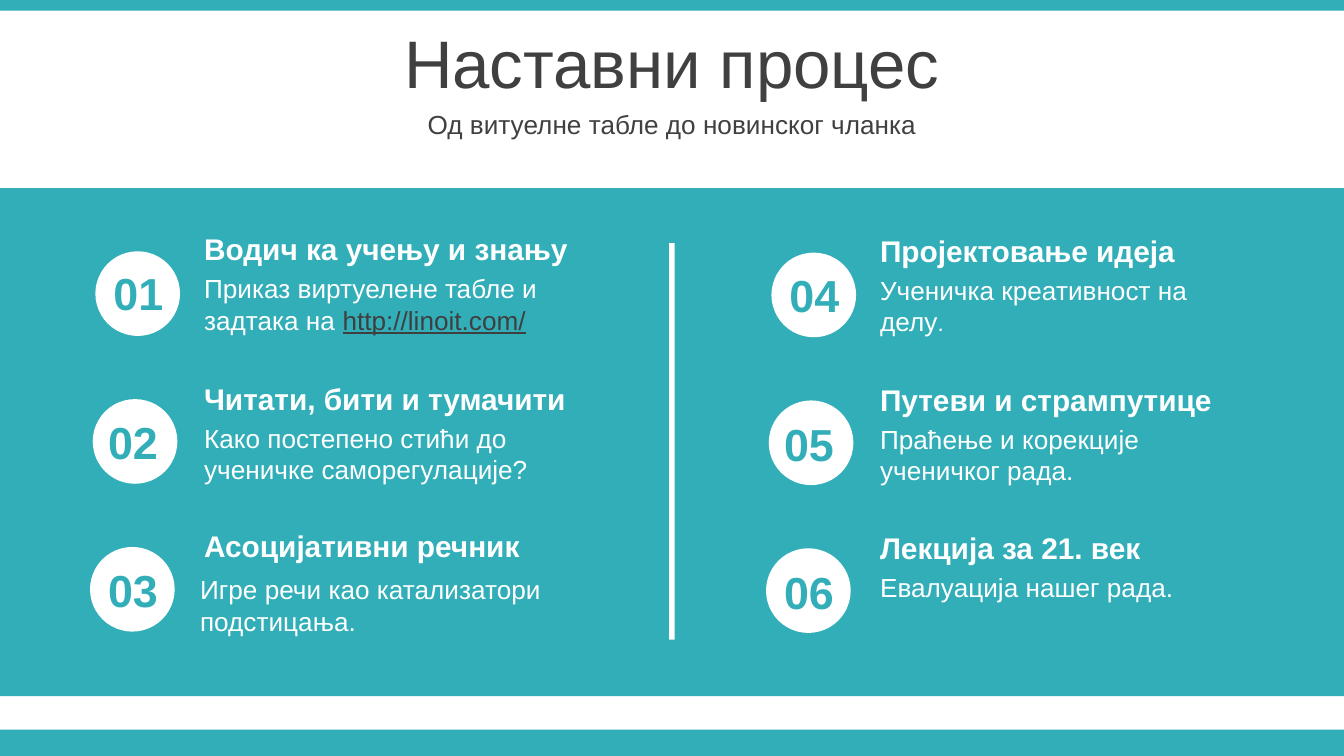
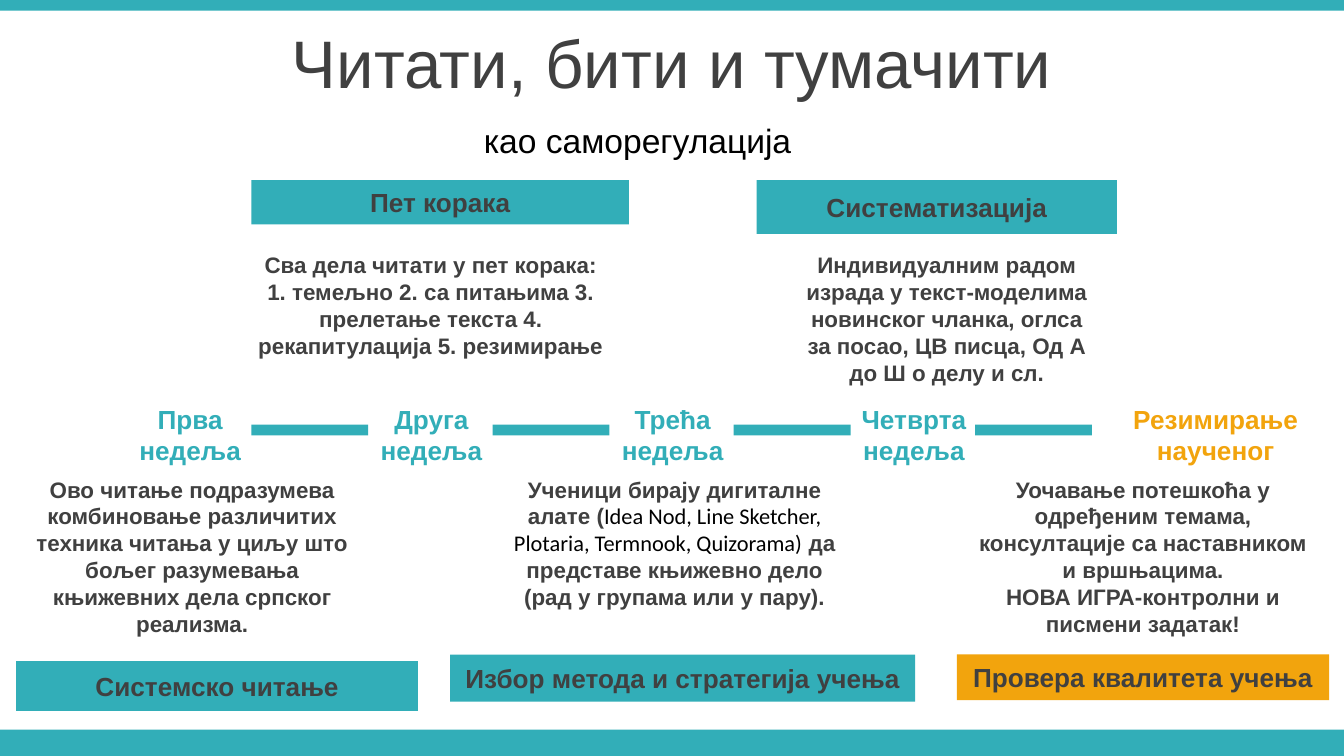
from dataclasses import dataclass
from typing import NamedTuple

import pptx
import pptx.dml.color
import pptx.enum.shapes
import pptx.enum.text
import pptx.util

Inches = pptx.util.Inches
Kind = pptx.enum.shapes.MSO_SHAPE
Align = pptx.enum.text.PP_ALIGN
Anchor = pptx.enum.text.MSO_ANCHOR


@dataclass(frozen=True)
class Theme:
    teal: str = "32AEB8"
    gold: str = "F2A40D"
    white: str = "FFFFFF"
    black: str = "000000"
    dark: str = "404040"
    link: str = "3F3F3F"
    font: str = "Arial"
    plain: str = "Calibri"
    title: int = 36
    count: int = 24
    lead: int = 18
    head: int = 16
    body: int = 14
    note: int = 12


LOOK = Theme()


class Box(NamedTuple):
    x: float
    y: float
    w: float
    h: float


class Run(NamedTuple):
    text: str
    size: int = LOOK.body
    color: str = LOOK.white
    bold: bool = False
    font: str = LOOK.font
    line: bool = False


Paras = list[list[Run]]


class Step(NamedTuple):
    head: str
    body: list[Run]
    dx: float = 0
    dy: float = 0


class Card(NamedTuple):
    label: str
    bar: Box
    area: Box
    paras: Paras
    fill: str = LOOK.teal


def place(shape, box: Box) -> None:
    shape.left, shape.top, shape.width, shape.height = map(Inches, box)


def write(shape, paras: Paras, align=Align.LEFT, anchor=Anchor.TOP) -> None:
    frame = shape.text_frame
    frame.word_wrap = True
    frame.auto_size = pptx.enum.text.MSO_AUTO_SIZE.NONE
    frame.vertical_anchor = anchor
    for i, runs in enumerate(paras):
        para = frame.add_paragraph() if i else frame.paragraphs[0]
        para.alignment = align
        for item in runs:
            run = para.add_run()
            run.text = item.text
            font = run.font
            font.name, font.size = item.font, pptx.util.Pt(item.size)
            font.bold, font.underline = item.bold, item.line
            font.color.rgb = pptx.dml.color.RGBColor.from_string(item.color)


def add_text(slide, box: Box, paras: Paras, align=Align.LEFT,
             anchor=Anchor.TOP):
    shape = slide.shapes.add_textbox(*map(Inches, box))
    write(shape, paras, align, anchor)
    return shape


def add_form(slide, box: Box, fill: str, kind=Kind.RECTANGLE):
    shape = slide.shapes.add_shape(kind, *map(Inches, box))
    shape.shadow.inherit = False
    shape.fill.solid()
    shape.fill.fore_color.rgb = pptx.dml.color.RGBColor.from_string(fill)
    shape.line.fill.background()
    return shape


def add_bands(slide) -> None:
    """Put the top and bottom bands on the layout that the slides share."""
    for box in (Box(0, 5.43, 10, 0.2), Box(0, 0, 10, 0.08)):
        band = add_form(slide, box, LOOK.teal)
        slide.slide_layout.shapes.element.append(band.element)


def add_page(deck, title: str):
    slide = deck.slides.add_slide(deck.slide_layouts[5])
    place(slide.shapes.title, Box(0, 0.14, 10, 0.63))
    write(slide.shapes.title, [[Run(title, LOOK.title, LOOK.dark)]],
          Align.CENTER, Anchor.MIDDLE)
    return slide


STEPS = [
    Step("Водич ка учењу и знању",
         [Run("Приказ виртуелене табле и задтака на "),
          Run("http://linoit.com/", color=LOOK.link, line=True)]),
    Step("Читати, бити и тумачити",
         [Run("Како постепено стићи до ученичке саморегулације?")]),
    Step("Асоцијативни речник",
         [Run("Игре речи као катализатори подстицања.")], -0.03, 0.03),
    Step("Пројектовање идеја",
         [Run("Ученичка креативност на делу"), Run(".", LOOK.note)]),
    Step("Путеви и стрампутице",
         [Run("Праћење и корекције ученичког рада.")]),
    Step("Лекција за 21. век", [Run("Евалуација нашег рада.")]),
]
TOPS = (1.67, 2.78, 3.88)
COUNT_X = (0.68, 0.64, 0.64)


def add_step(slide, i: int, step: Step) -> None:
    col, row = divmod(i, len(TOPS))
    x, drop = 5.03 * col, 0.01 * col
    y = TOPS[row] + drop
    add_form(slide, Box(x + 0.71 - 0.02 * row, 1.87 + 1.1 * row + drop,
                        0.63, 0.63), LOOK.white, Kind.OVAL)
    add_text(slide, Box(x + COUNT_X[row], y + 0.26, 0.7, 0.5),
             [[Run(f"{i + 1:02}", LOOK.count, LOOK.teal, True)]],
             Align.CENTER)
    add_text(slide, Box(x + 1.42 + step.dx, y + 0.31 + step.dy, 2.91, 0.57),
             [step.body])
    add_text(slide, Box(x + 1.42, y, 2.91, 0.37),
             [[Run(step.head, LOOK.head, bold=True)]])


def build_steps(deck) -> None:
    slide = add_page(deck, "Наставни процес")
    add_bands(slide)
    add_text(slide, Box(0, 0.77, 10, 0.31),
             [[Run("Од витуелне табле до новинског чланка",
                   color=LOOK.dark)]], Align.CENTER, Anchor.MIDDLE)
    add_form(slide, Box(0, 1.4, 10, 3.78), LOOK.teal)
    add_form(slide, Box(4.98, 1.81, 0.04, 2.95), LOOK.white)
    for i, step in enumerate(STEPS):
        add_step(slide, i, step)


def note(text: str) -> Run:
    return Run(text, LOOK.note, LOOK.dark, True)


CARDS = [
    Card("Системско читање", Box(0.12, 4.92, 2.99, 0.37),
         Box(0.12, 3.49, 2.62, 1.31),
         [[note("Ово читање подразумева комбиновање различитих техника "
                "читања у циљу што бољег разумевања књижевних дела "
                "српског реализма.")]]),
    Card("Пет корака", Box(1.87, 1.34, 2.81, 0.33),
         Box(1.8, 1.82, 2.81, 0.91),
         [[note("Сва дела читати у пет корака:")],
          [note("1. темељно 2. са питањима 3. прелетање текста 4. "
                "рекапитулација 5. резимирање")]]),
    Card("Избор метода и стратегија учења", Box(3.35, 4.87, 3.46, 0.35),
         Box(3.71, 3.49, 2.62, 1.11),
         [[note("Ученици бирају дигиталне алате ("),
           Run("Idea Nod, Line Sketcher, Plotaria, Termnook, Quizorama)",
               LOOK.note, LOOK.black, font=LOOK.plain),
           note(" да представе књижевно дело (рад у групама или у "
                "пару).")]]),
    Card("Провера квалитета учења", Box(7.12, 4.87, 2.77, 0.34),
         Box(7.12, 3.49, 2.77, 1.31),
         [[note("Уочавање потешкоћа у одређеним темама, консултације са "
                "наставником и вршњацима.")],
          [note("НОВА ИГРА-контролни и писмени задатак!")]], LOOK.gold),
    Card("Систематизација", Box(5.63, 1.34, 2.68, 0.4),
         Box(5.87, 1.82, 2.35, 1.11),
         [[note("Индивидуалним радом израда у текст-моделима новинског "
                "чланка, оглса за посао, ЦВ писца, Од А до Ш о делу "
                "и сл.")]]),
]
WEEKS = ("Прва недеља", "Друга недеља", "Трећа недеља", "Четврта недеља",
         "Резимирање наученог")
PITCH = 7.18 / 4


def add_weeks(slide) -> None:
    last = len(WEEKS) - 1
    for i, week in enumerate(WEEKS):
        wide, color = (1.91, LOOK.gold) if i == last else (1.01, LOOK.teal)
        add_text(slide, Box(0.91 + PITCH * i, 2.95, wide, 0.57),
                 [[Run(week, color=color, bold=True)]], Align.CENTER)
        if i < last:
            add_form(slide, Box(1.87 + PITCH * i, 3.16, 0.87, 0.08),
                     LOOK.teal)


def add_card(slide, card: Card) -> None:
    add_text(slide, card.area, card.paras, Align.CENTER)
    bar = add_form(slide, card.bar, card.fill)
    write(bar, [[Run(card.label, color=LOOK.dark, bold=True)]],
          Align.CENTER, Anchor.MIDDLE)


def build_weeks(deck) -> None:
    slide = add_page(deck, "Читати, бити и тумачити")
    add_weeks(slide)
    for card in CARDS:
        add_card(slide, card)
    lead = add_text(slide, Box(2.26, 0.84, 5.51, 0.4),
                    [[Run("као саморегулација", LOOK.lead, LOOK.black)]])
    lead.text_frame.margin_left = Inches(1.34)


def main() -> None:
    deck = pptx.Presentation()
    deck.slide_width = Inches(10)
    deck.slide_height = Inches(10) * 9 // 16
    build_steps(deck)
    build_weeks(deck)
    deck.save("out.pptx")


if __name__ == "__main__":
    main()
